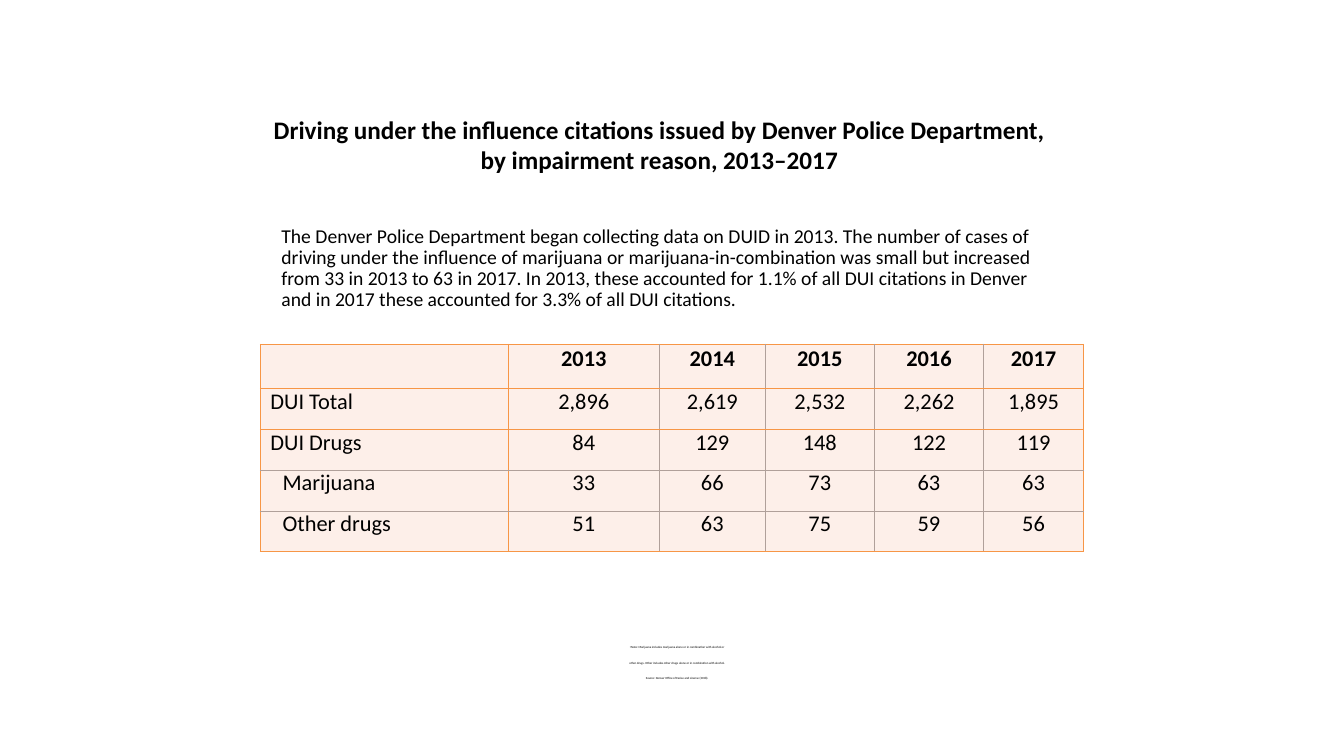
from dataclasses import dataclass

import lxml.etree
import pptx
import pptx.dml.color
import pptx.enum.text
import pptx.oxml.ns
import pptx.util

# Grid: 80 columns by 45 rows of square units
COLUMNS, ROWS = 80, 45
UNIT = pptx.util.Inches(7.5) // ROWS

FONT = "Calibri"
BLACK, PEACH, ORANGE, GREY = "000000", "FDEFE9", "F79646", "B0A09A"
ALIGN = pptx.enum.text.PP_ALIGN
ANCHOR = pptx.enum.text.MSO_ANCHOR


@dataclass
class Passage:
    """Text in a placeholder; lengths are in grid units, sizes in points."""
    index: int
    text: str
    left: float
    top: float
    width: float
    height: float
    margins: tuple[float, float, float, float]  # left, top, right, bottom
    size: float
    bold: bool = False
    align: ALIGN = ALIGN.LEFT
    leading: float | None = None
    indent: float = 0
    bullet: str = ""


@dataclass
class CitationRow:
    label: str
    values: list[str]
    height: float = 2.43
    indent: float = 0.6
    before: float = 0
    after: float = 0.6
    bold: bool = False


PASSAGES = [
    Passage(0, "Driving under the influence citations issued by Denver Police Department, "
               "by impairment reason, 2013–2017",
            15, 6.5, 48.5, 6, (0.6, 0.3, 0.6, 0.3), 18, bold=True, align=ALIGN.CENTER),
    Passage(1, "The Denver Police Department began collecting data on DUID in 2013. "
               "The number of cases of driving under the influence of marijuana or "
               "marijuana-in-combination was small but increased from 33 in 2013 to 63 in 2017. "
               "In 2013, these accounted for 1.1% of all DUI citations in Denver and in 2017 "
               "these accounted for 3.3% of all DUI citations.",
            16.75, 12.54, 46.5, 6.5, (0, 0.92, 0, 0), 14, leading=15),
    Passage(2, "Note: Marijuana includes marijuana alone or in combination with alcohol or\v"
               "other drugs. Other includes other drugs alone or in combination with alcohol.\v"
               "Source: Denver Office of Excise and License (2018).",
            14.75, 29, 50.5, 9.5, (0, 8.75, 0, 0), 2.2, align=ALIGN.CENTER,
            leading=11, indent=0.6, bullet="•"),
]

TABLE_LEFT, TABLE_TOP = 15.5, 20.5
TABLE_COLUMNS = [14.75, 9, 6.3, 6.5, 6.5, 5.95]
CITATIONS = [
    CitationRow("", ["2013", "2014", "2015", "2016", "2017"],
                height=2.64, before=1.8, after=0.9, bold=True),
    CitationRow("DUI Total", ["2,896", "2,619", "2,532", "2,262", "1,895"], after=0),
    CitationRow("DUI Drugs", ["84", "129", "148", "122", "119"]),
    CitationRow("Marijuana", ["33", "66", "73", "63", "63"], indent=1.32),
    CitationRow("Other drugs", ["51", "63", "75", "59", "56"], indent=1.32, after=1),
]


def grid(units: float) -> int:
    return round(units * UNIT)


def colour(hex_string: str) -> pptx.dml.color.RGBColor:
    return pptx.dml.color.RGBColor.from_string(hex_string)


def add_xml(parent, tag: str, **attributes: str):
    return lxml.etree.SubElement(parent, pptx.oxml.ns.qn(tag), attributes)


def format_paragraph(paragraph, size: float, bold: bool, align: ALIGN,
                     leading: float | None, indent: float = 0,
                     before: float = 0, after: float = 0) -> None:
    paragraph.alignment = align
    if leading:
        paragraph.line_spacing = pptx.util.Pt(leading)
    paragraph.space_before = pptx.util.Pt(before)
    paragraph.space_after = pptx.util.Pt(after)
    properties = paragraph._p.get_or_add_pPr()
    properties.set("marL", str(grid(indent)))
    properties.set("indent", "0")
    for run in paragraph.runs:
        run.font.name = FONT
        run.font.size = pptx.util.Pt(size)
        run.font.bold = bold
        run.font.color.rgb = colour(BLACK)


def set_margins(holder, margins: tuple[float, float, float, float]) -> None:
    (holder.margin_left, holder.margin_top,
     holder.margin_right, holder.margin_bottom) = map(grid, margins)


def write_passage(slide, passage: Passage) -> None:
    holder = slide.placeholders[passage.index]
    holder.left, holder.top = grid(passage.left), grid(passage.top)
    holder.width, holder.height = grid(passage.width), grid(passage.height)
    frame = holder.text_frame
    frame.word_wrap = True
    frame.auto_size = pptx.enum.text.MSO_AUTO_SIZE.NONE
    frame.vertical_anchor = ANCHOR.TOP
    set_margins(frame, passage.margins)
    paragraph = frame.paragraphs[0]
    paragraph.text = passage.text
    format_paragraph(paragraph, passage.size, passage.bold, passage.align,
                     passage.leading, passage.indent)
    properties = paragraph._p.get_or_add_pPr()
    if passage.bullet:
        add_xml(properties, "a:buChar", char=passage.bullet)
    else:
        add_xml(properties, "a:buNone")


def draw_borders(cell, row: int, column: int) -> None:
    """Frame, header, label column and total row are orange; the rest is grey."""
    last_row, last_column = len(CITATIONS) - 1, len(TABLE_COLUMNS) - 1
    edges = {
        "a:lnL": column <= 1,
        "a:lnR": column in (0, last_column),
        "a:lnT": row <= 2,
        "a:lnB": row <= 1 or row == last_row,
    }
    for tag, strong in edges.items():
        line = add_xml(cell._tc.get_or_add_tcPr(), tag, w=str(pptx.util.Pt(1)))
        fill = add_xml(line, "a:solidFill")
        add_xml(fill, "a:srgbClr", val=ORANGE if strong else GREY)


def draw_citations(slide) -> None:
    table = slide.shapes.add_table(
        len(CITATIONS), len(TABLE_COLUMNS), grid(TABLE_LEFT), grid(TABLE_TOP),
        grid(sum(TABLE_COLUMNS)), grid(sum(row.height for row in CITATIONS))).table
    table.first_row = table.horz_banding = False
    for column, width in zip(table.columns, TABLE_COLUMNS):
        column.width = grid(width)
    for r, citation in enumerate(CITATIONS):
        table.rows[r].height = grid(citation.height)
        for c, text in enumerate([citation.label, *citation.values]):
            cell = table.cell(r, c)
            cell.vertical_anchor = ANCHOR.MIDDLE
            set_margins(cell, (0, 0, 0, 0))
            cell.text_frame.text = text
            format_paragraph(cell.text_frame.paragraphs[0], 16, citation.bold,
                             ALIGN.CENTER if c else ALIGN.LEFT, 9,
                             0 if c else citation.indent, citation.before, citation.after)
            draw_borders(cell, r, c)
            cell.fill.solid()
            cell.fill.fore_color.rgb = colour(PEACH)


def main() -> None:
    presentation = pptx.Presentation()
    presentation.slide_width = grid(COLUMNS)
    presentation.slide_height = grid(ROWS)
    # Layout with a title and two bodies
    slide = presentation.slides.add_slide(presentation.slide_layouts[3])
    for passage in PASSAGES:
        write_passage(slide, passage)
    draw_citations(slide)
    presentation.save("out.pptx")


if __name__ == "__main__":
    main()
